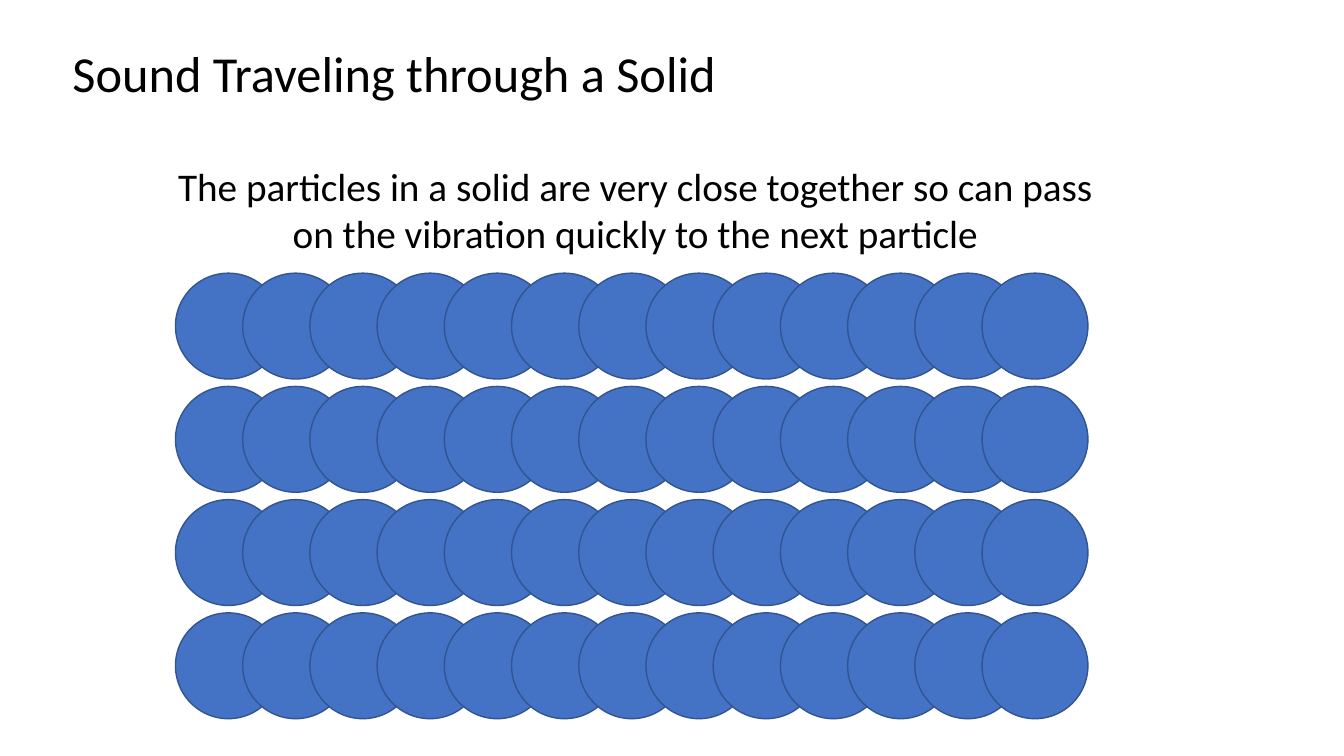
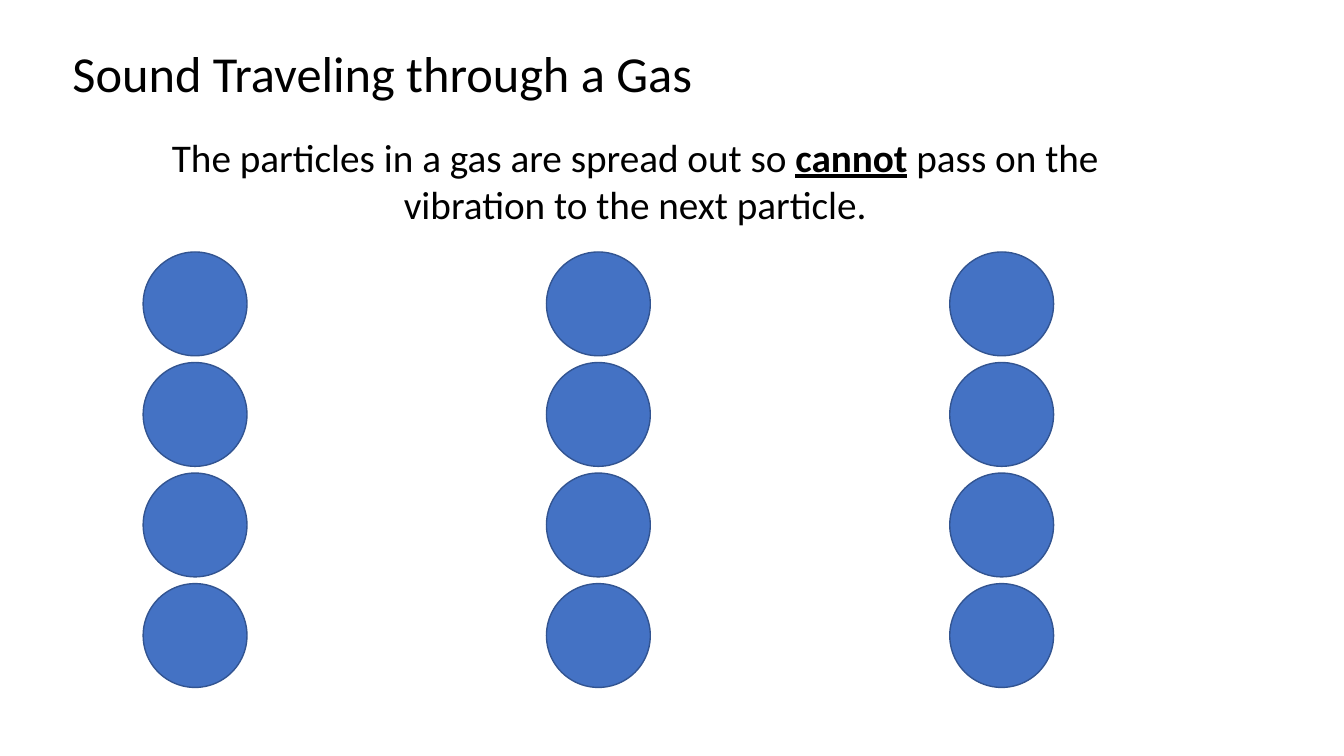
"""Build two slides on how sound travels through the particles of a solid and a gas."""
import pptx
import pptx.dml.color
import pptx.enum.shapes
import pptx.enum.text
import pptx.util

Inches = pptx.util.Inches
Pt = pptx.util.Pt
ALIGN = pptx.enum.text.PP_ALIGN
AUTO_SIZE = pptx.enum.text.MSO_AUTO_SIZE

TEXT_COLOUR = "000000"
PARTICLE_FILL = "4472C4"
PARTICLE_LINE = "325491"
TITLE_FONT = {"name": "Calibri", "size": Pt(36)}
CAPTION_FONT = {"name": "Calibri", "size": Pt(28)}
EMPHASIS = {"bold": True, "underline": True}
ROWS = 4


def colour(hex_text):
    return pptx.dml.color.RGBColor.from_string(hex_text)


def apply_format(target, values):
    for name, value in values.items():
        setattr(target, name, value)


def add_text(slide, bounds, spans, font, align, wrap):
    box = slide.shapes.add_textbox(*map(Inches, bounds))
    apply_format(box.text_frame, {"word_wrap": wrap, "auto_size": AUTO_SIZE.SHAPE_TO_FIT_TEXT})
    para = box.text_frame.paragraphs[0]
    para.alignment = align
    for text, extra in spans:
        span = para.add_run()
        span.text = text
        apply_format(span.font, {**font, **extra})
        span.font.color.rgb = colour(TEXT_COLOUR)


def add_title(slide, text, width):
    add_text(slide, (0.62, 0.37, width, 0.71), [(text, {})], TITLE_FONT, ALIGN.LEFT, False)


def add_caption(slide, top, spans):
    add_text(slide, (1.55, top, 9.5, 1.04), spans, CAPTION_FONT, ALIGN.CENTER, True)


def add_particle(column, left, top, diameter):
    particle = column.shapes.add_shape(
        pptx.enum.shapes.MSO_SHAPE.OVAL, *map(Inches, (left, top, diameter, diameter)))
    particle.shadow.inherit = False
    particle.fill.solid()
    particle.fill.fore_color.rgb = colour(PARTICLE_FILL)
    particle.line.color.rgb = colour(PARTICLE_LINE)
    particle.line.width = Pt(1)


def add_particles(slide, first, last, columns, diameter):
    (left, top), (last_left, last_top) = first, last
    column_step = (last_left - left) / (columns - 1)
    row_step = (last_top - top) / (ROWS - 1)
    for column_index in range(columns):
        column = slide.shapes.add_group_shape()
        for row_index in range(ROWS):
            add_particle(column, left + column_index * column_step,
                         top + row_index * row_step, diameter)


def build_solid(slide):
    add_title(slide, "Sound Traveling through a Solid", 6.64)
    add_particles(slide, (1.74, 2.71), (9.74, 6.08), 13, 1.05)
    add_caption(slide, 1.56, [
        ("The particles in a solid are very close together so can pass "
         "on the vibration quickly to the next particle", {})])


def build_gas(slide):
    add_title(slide, "Sound Traveling through a Gas", 6.41)
    add_caption(slide, 1.27, [
        ("The particles in a gas are spread out so ", {}),
        ("cannot", EMPHASIS),
        (" pass on the vibration to the next particle.", {})])
    add_particles(slide, (1.42, 2.5), (9.42, 5.79), 3, 1.03)


def main():
    deck = pptx.Presentation()
    apply_format(deck, {"slide_width": Inches(13.33), "slide_height": Inches(7.5)})
    for build in (build_solid, build_gas):
        build(deck.slides.add_slide(deck.slide_layouts[6]))
    deck.save("out.pptx")


if __name__ == "__main__":
    main()
